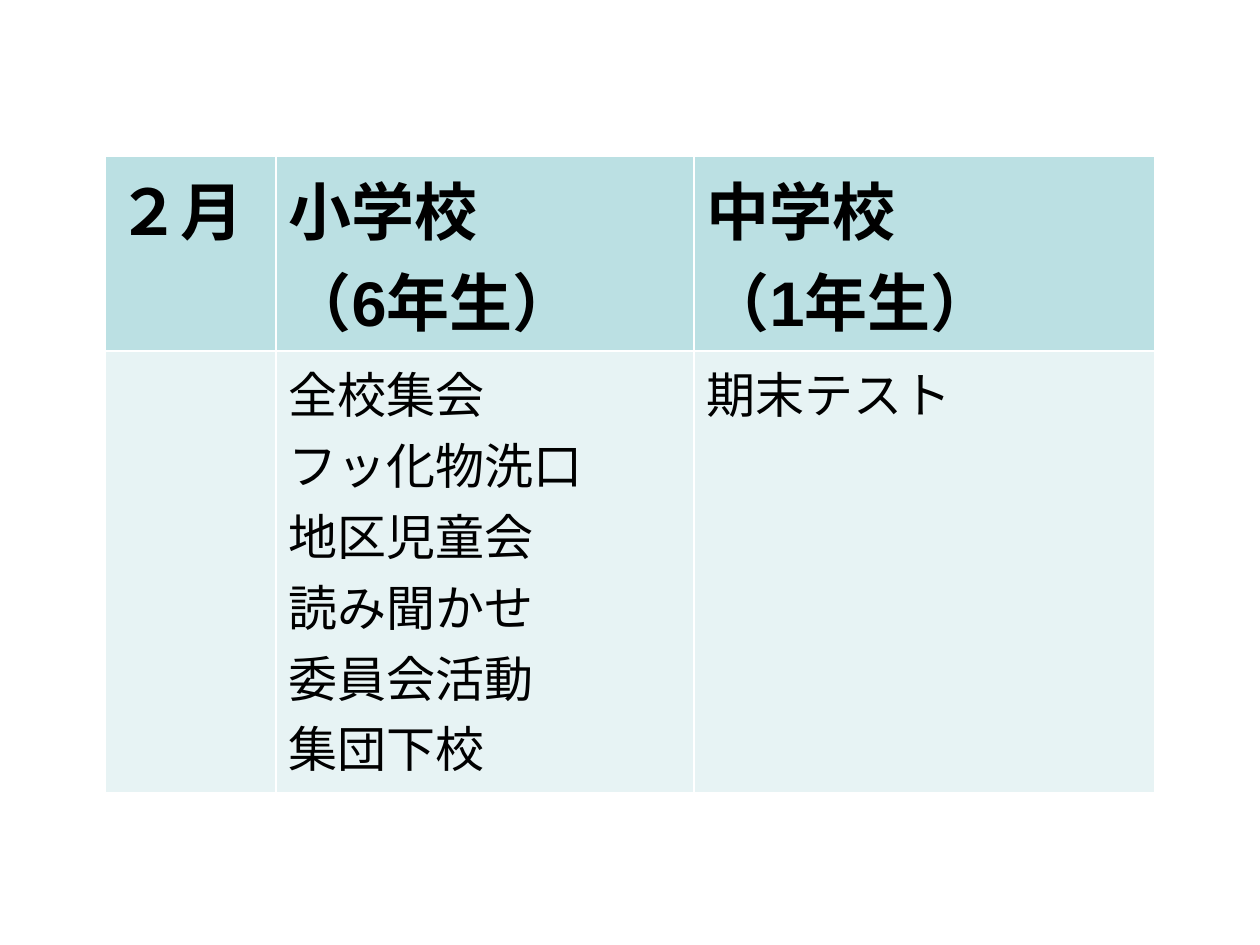
from pptx import Presentation
from pptx.dml.color import RGBColor
from pptx.enum.lang import MSO_LANGUAGE_ID
from pptx.util import Emu, Pt

BLACK = RGBColor(0x00, 0x00, 0x00)
HEADER_FILL = RGBColor(0xBB, 0xE0, 0xE3)
BODY_FILL = RGBColor(0xE7, 0xF3, 0xF4)
JAPANESE = MSO_LANGUAGE_ID.JAPANESE
BLANK_LAYOUT = 6

COLUMN_WIDTHS = [171, 418, 461]
ROW_HEIGHTS = [193, 442]
SCHEDULE = [
    ["２月", "小学校\n（6年生）", "中学校\n（1年生）"],
    ["", "全校集会\nフッ化物洗口\n地区児童会\n読み聞かせ\n委員会活動\n集団下校", "期末テスト"],
]


def px(length):
    """Turn pixels into EMU."""
    return Emu(round(length * 914400 / 126))


class SlideBuilder:
    """Hold the style and the current slide."""

    font_name = "Arial"
    header_style = (HEADER_FILL, 36, True)
    body_style = (BODY_FILL, 28, False)

    def __init__(self, slide):
        self.slide = slide

    def fill_cell(self, cell, text, style):
        """Write and format one table cell."""
        color, size, bold = style
        cell.fill.solid()
        cell.fill.fore_color.rgb = color
        cell.text_frame.text = text
        for paragraph in cell.text_frame.paragraphs:
            for span in paragraph.runs:
                span.font.name = self.font_name
                span.font.size = Pt(size)
                span.font.bold = bold
                span.font.color.rgb = BLACK
                span.font.language_id = JAPANESE

    def table(self, left, top, widths, heights, rows):
        """Add a table with a header row."""
        frame = self.slide.shapes.add_table(
            len(heights), len(widths), px(left), px(top), px(sum(widths)), px(sum(heights))
        )
        table = frame.table
        for column, width in zip(table.columns, widths):
            column.width = px(width)
        for index, (row, height, texts) in enumerate(zip(table.rows, heights, rows)):
            row.height = px(height)
            style = self.body_style if index else self.header_style
            for cell, text in zip(row.cells, texts):
                self.fill_cell(cell, text, style)


def main():
    """Build the February schedule slide."""
    deck = Presentation()
    deck.slide_width, deck.slide_height = px(1260), px(945)
    builder = SlideBuilder(deck.slides.add_slide(deck.slide_layouts[BLANK_LAYOUT]))
    builder.table(105, 156, COLUMN_WIDTHS, ROW_HEIGHTS, SCHEDULE)
    deck.save("out.pptx")


if __name__ == "__main__":
    main()
